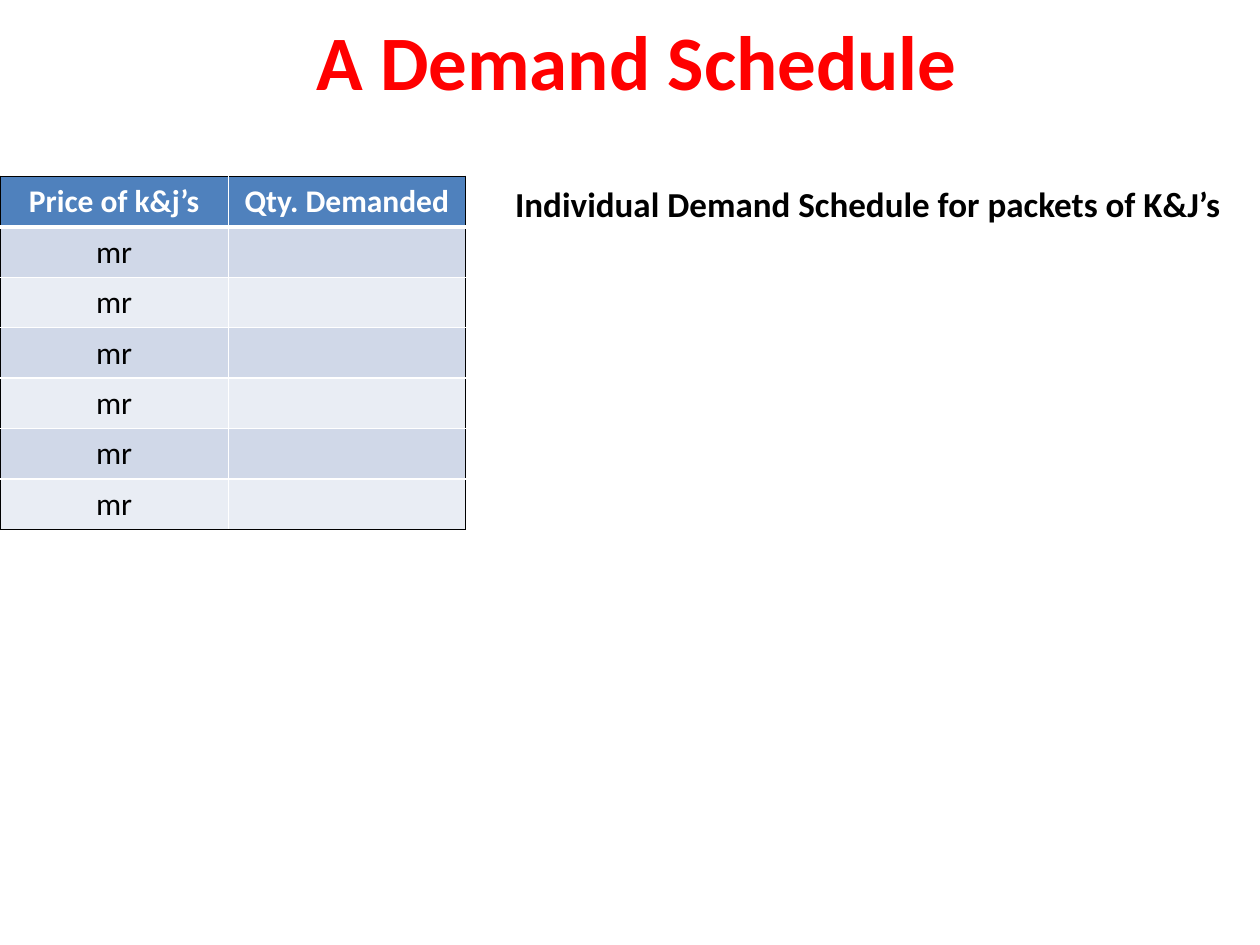
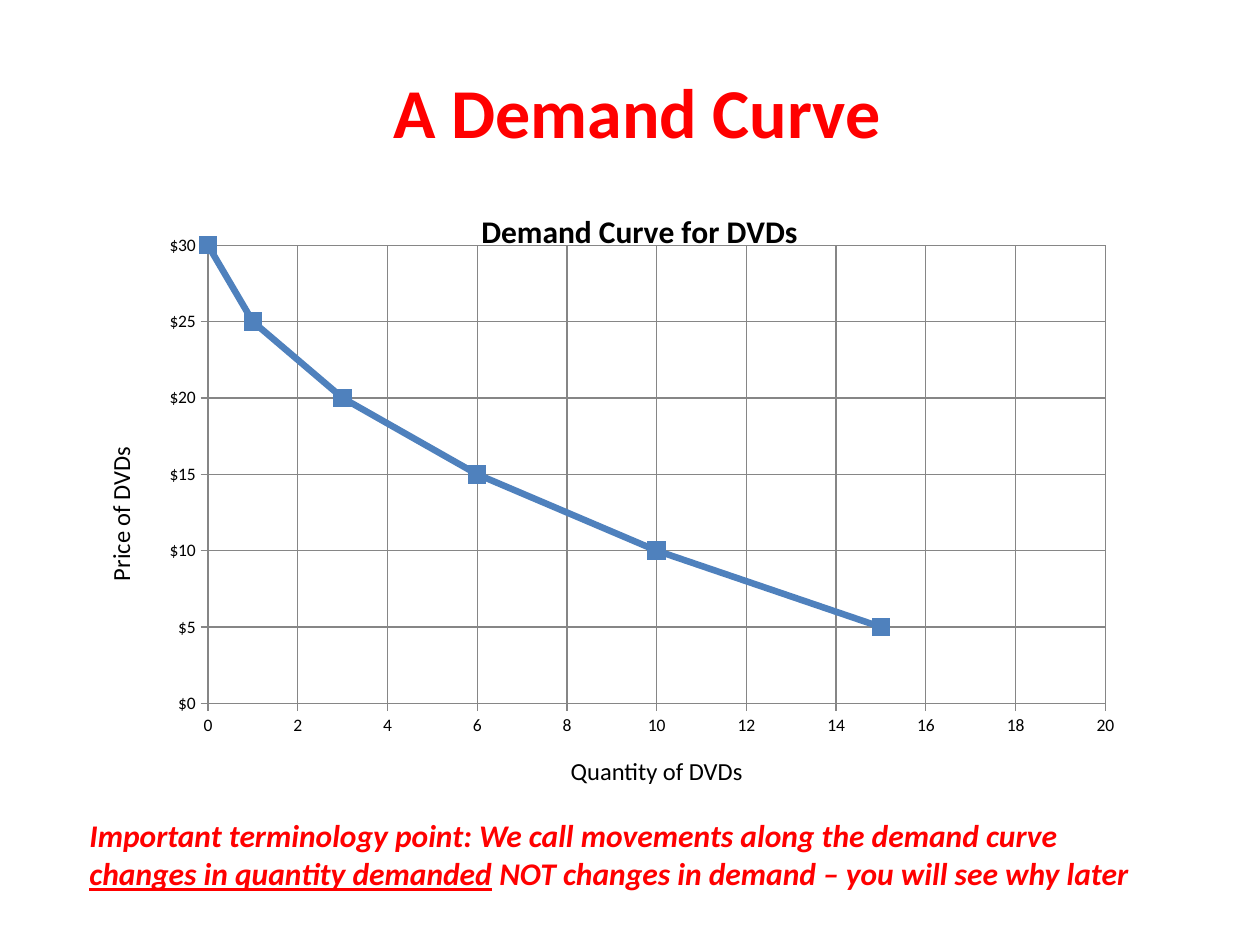
from lxml.etree import SubElement
from pptx import Presentation
from pptx.chart.data import XyChartData
from pptx.dml.color import RGBColor
from pptx.enum.chart import XL_CHART_TYPE, XL_MARKER_STYLE, XL_TICK_MARK
from pptx.enum.text import MSO_ANCHOR, MSO_AUTO_SIZE, PP_ALIGN
from pptx.oxml.ns import qn
from pptx.util import Pt

FONT = "Calibri"
RED = RGBColor(0xFF, 0x00, 0x00)
BLACK = RGBColor(0x00, 0x00, 0x00)
WHITE = RGBColor(0xFF, 0xFF, 0xFF)
GRAY = RGBColor(0x86, 0x86, 0x86)
BLUE = RGBColor(0x4F, 0x81, 0xBD)
BANDS = [RGBColor(0xE9, 0xED, 0xF4), RGBColor(0xD0, 0xD8, 0xE8)]

SCHEDULE_TITLE = "A Demand Schedule"
SCHEDULE_CAPTION = "Individual Demand Schedule for packets of K&J’s"
SCHEDULE = [("Price of k&j’s", "Qty. Demanded")] + [("mr", "")] * 6
COLUMN_WIDTHS = [130.5, 135.5]
ROW_HEIGHT = 28.8

CURVE_TITLE = "A Demand Curve"
CHART_TITLE = "Demand Curve for DVDs"
PRICE_LABEL = "Price of DVDs"
QUANTITY_LABEL = "Quantity of DVDs"
DEMAND_POINTS = [(0, 30), (1, 25), (3, 20), (6, 15), (10, 10), (15, 5)]
TERMINOLOGY = [
    ("Important terminology point: We call movements along the demand curve ", {}),
    ("changes in quantity demanded", {"underline": True}),
    (" ", {"italic": False}),
    ("NOT changes in demand – you will see why later", {}),
]


def write(paragraph, text, size=18, color=BLACK, bold=False, italic=False,
          underline=False, align=PP_ALIGN.LEFT):
    paragraph.alignment = align
    run = paragraph.add_run()
    run.text = text
    font = run.font
    font.name, font.size = FONT, Pt(size)
    font.bold, font.italic, font.underline = bold, italic, underline
    font.color.rgb = color


def place(shape, left, top, width, height):
    shape.left, shape.top = Pt(left), Pt(top)
    shape.width, shape.height = Pt(width), Pt(height)


def add_titled_slide(presentation, title, top, height, size):
    slide = presentation.slides.add_slide(presentation.slide_layouts[5])
    shape = slide.shapes.title
    place(shape, 44, top, 640, height)
    frame = shape.text_frame
    frame.vertical_anchor = MSO_ANCHOR.TOP
    frame.auto_size = MSO_AUTO_SIZE.SHAPE_TO_FIT_TEXT
    write(frame.paragraphs[0], title, size=size, color=RED, bold=True,
          align=PP_ALIGN.CENTER)
    return slide


def add_text(slide, box, runs, wrap=False, rotation=0, **format):
    shape = slide.shapes.add_textbox(*map(Pt, box))
    shape.rotation = rotation
    frame = shape.text_frame
    frame.word_wrap = wrap
    frame.auto_size = MSO_AUTO_SIZE.SHAPE_TO_FIT_TEXT
    for text, changes in runs:
        write(frame.paragraphs[0], text, **{**format, **changes})


def set_border(cell, side, color, width):
    properties = cell._tc.get_or_add_tcPr()
    line = SubElement(properties, qn(f"a:ln{side}"), w=str(Pt(width)))
    fill = SubElement(line, qn("a:solidFill"))
    SubElement(fill, qn("a:srgbClr"), val=str(color))


def add_schedule(slide):
    rows, columns = len(SCHEDULE), len(COLUMN_WIDTHS)
    table = slide.shapes.add_table(rows, columns, 0, Pt(100.8), Pt(sum(COLUMN_WIDTHS)),
                                   Pt(ROW_HEIGHT * rows)).table
    for column, width in zip(table.columns, COLUMN_WIDTHS):
        column.width = Pt(width)
    for r, texts in enumerate(SCHEDULE):
        table.rows[r].height = Pt(ROW_HEIGHT)
        header = r == 0
        for c, text in enumerate(texts):
            cell = table.cell(r, c)
            outer = {"L": c == 0, "R": c == columns - 1, "T": header, "B": r == rows - 1}
            for side, is_outer in outer.items():
                thick = (header and side == "B") or (r == 1 and side == "T")
                set_border(cell, side, BLACK if is_outer else WHITE, 3 if thick else 1)
            cell.fill.solid()
            cell.fill.fore_color.rgb = BLUE if header else BANDS[r % 2]
            if text:
                write(cell.text_frame.paragraphs[0], text, bold=header,
                      color=WHITE if header else BLACK, align=PP_ALIGN.CENTER)


def set_layout(element, index, **values):
    layout = element.find(qn("c:layout"))
    if layout is None:
        layout = element.makeelement(qn("c:layout"))
        element.insert(index, layout)
    manual = SubElement(layout, qn("c:manualLayout"))
    for name, value in values.items():
        SubElement(manual, qn(f"c:{name}"), val=str(value))


def format_axis(axis, maximum, step, number_format):
    axis.minimum_scale, axis.maximum_scale, axis.major_unit = 0, maximum, step
    axis.has_major_gridlines = True
    axis.major_tick_mark = XL_TICK_MARK.OUTSIDE
    axis.minor_tick_mark = XL_TICK_MARK.NONE
    axis.tick_labels.number_format = number_format
    axis.tick_labels.number_format_is_linked = False
    for line in (axis.format.line, axis.major_gridlines.format.line):
        line.color.rgb = GRAY
        line.width = Pt(0.75)


def add_demand_curve(slide):
    data = XyChartData()
    points = data.add_series("Series 1")
    for quantity, price in DEMAND_POINTS:
        points.add_data_point(quantity, price)
    chart = slide.shapes.add_chart(XL_CHART_TYPE.XY_SCATTER_LINES, Pt(80.6), Pt(100),
                                   Pt(562.3), Pt(329), data).chart
    chart.has_legend = False
    chart.font.name, chart.font.size = FONT, Pt(10)
    chart.font.color.rgb = BLACK
    chart.has_title = True
    write(chart.chart_title.text_frame.paragraphs[0], CHART_TITLE, bold=True,
          align=PP_ALIGN.CENTER)
    title = chart.chart_title.element
    set_layout(title, 1, xMode="edge", yMode="edge", x=0.34, y=0.05)
    set_layout(title.getparent().find(qn("c:plotArea")), 0, layoutTarget="inner",
               xMode="edge", yMode="edge", x="0.068", y="0.122", w="0.912", h="0.796")
    format_axis(chart.category_axis, 20, 2, "0")
    format_axis(chart.value_axis, 30, 5, '"$"0')
    chart.plots[0].vary_by_categories = False
    series = chart.plots[0].series[0]
    series.smooth = False
    series.format.line.color.rgb = BLUE
    series.format.line.width = Pt(3.75)
    series.marker.style = XL_MARKER_STYLE.SQUARE
    series.marker.size = 10
    series.marker.format.fill.solid()
    series.marker.format.fill.fore_color.rgb = BLUE
    series.marker.format.line.color.rgb = BLUE


def main():
    presentation = Presentation()
    presentation.slide_width, presentation.slide_height = Pt(720), Pt(540)

    slide = add_titled_slide(presentation, SCHEDULE_TITLE, 4.3, 60.5, 44)
    add_schedule(slide)
    add_text(slide, (287.3, 100.8, 438.5, 31.5), [(SCHEDULE_CAPTION, {})],
             size=20, bold=True)

    slide = add_titled_slide(presentation, CURVE_TITLE, 35.3, 55.5, 40)
    add_demand_curve(slide)
    add_text(slide, (44, 463, 620.6, 51), TERMINOLOGY, wrap=True, color=RED,
             bold=True, italic=True)
    add_text(slide, (23, 280.8, 92.2, 24.5), [(PRICE_LABEL, {})], rotation=270, size=14)
    add_text(slide, (319, 428.4, 113.8, 24.5), [(QUANTITY_LABEL, {})], size=14)

    presentation.save("out.pptx")


if __name__ == "__main__":
    main()
